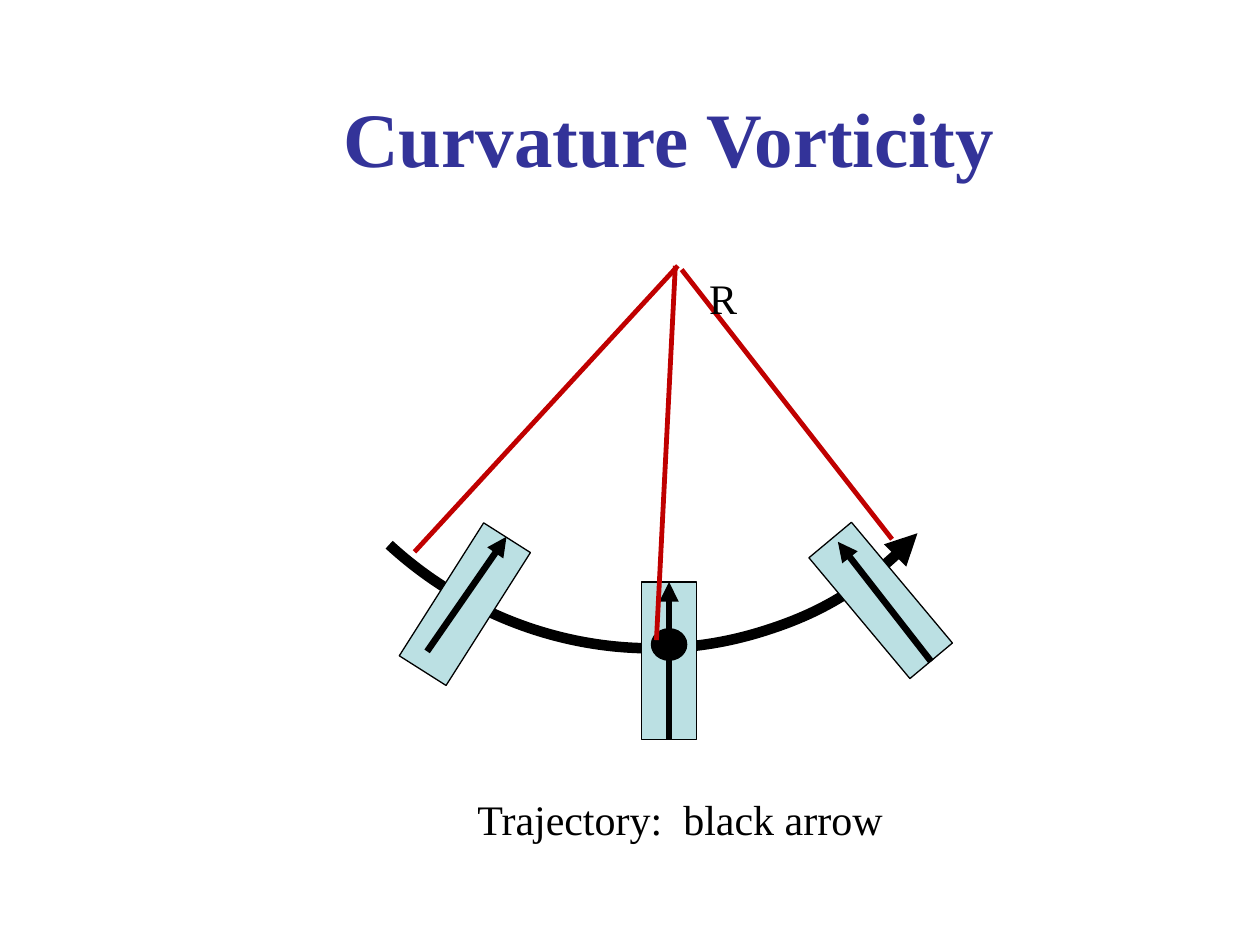
from pptx import Presentation
from pptx.dml.color import RGBColor
from pptx.enum.shapes import MSO_CONNECTOR, MSO_SHAPE
from pptx.enum.text import MSO_ANCHOR, PP_ALIGN
from pptx.oxml.ns import qn
from pptx.util import Inches, Pt
from lxml.etree import SubElement

COLORS = {"title": "333399", "black": "000000", "parcel": "BBE0E3", "radius": "C00000"}

presentation = Presentation()
presentation.slide_width, presentation.slide_height = Inches(10), Inches(7.5)
slide = presentation.slides.add_slide(presentation.slide_layouts[6])


def add_text(text, left, top, width, height, size=24, color="black", bold=False,
             align=PP_ALIGN.LEFT, anchor=MSO_ANCHOR.TOP, wrap=False):
    box = slide.shapes.add_textbox(Inches(left), Inches(top), Inches(width), Inches(height))
    frame = box.text_frame
    frame.word_wrap = wrap
    frame.vertical_anchor = anchor
    paragraph = frame.paragraphs[0]
    paragraph.text = text
    paragraph.alignment = align
    font = paragraph.font
    font.name, font.size, font.bold = "Times New Roman", Pt(size), bold
    font.color.rgb = RGBColor.from_string(COLORS[color])


def style_line(shape, color, width, arrow_end=None):
    """Set the outline; arrow_end is 'a:headEnd', 'a:tailEnd' or None."""
    shape.line.color.rgb = RGBColor.from_string(COLORS[color])
    shape.line.width = Pt(width)
    if arrow_end:
        SubElement(shape.line._get_or_add_ln(), qn(arrow_end), type="triangle")


add_text("Curvature Vorticity", 1.06, 0.46, 8.5, 1.25, size=44, color="title", bold=True,
         align=PP_ALIGN.CENTER, anchor=MSO_ANCHOR.MIDDLE, wrap=True)

trajectory = slide.shapes.add_shape(
    MSO_SHAPE.ARC, Inches(2.15), Inches(-0.84), Inches(5.81), Inches(6.05))
trajectory.rotation = 132.6
trajectory.shadow.inherit = False
trajectory.fill.background()
style_line(trajectory, "black", 6, "a:headEnd")

# Three air parcels along the trajectory, then the point at the middle one
parcels = []
for kind, left, top, width, height, rotation, fill in (
    (MSO_SHAPE.RECTANGLE, 3.47, 4.17, 0.44, 1.25, 32.4, "parcel"),
    (MSO_SHAPE.RECTANGLE, 5.09, 4.62, 0.44, 1.25, 0, "parcel"),
    (MSO_SHAPE.RECTANGLE, 6.77, 4.14, 0.44, 1.25, 320.1, "parcel"),
    (MSO_SHAPE.OVAL, 5.17, 4.99, 0.28, 0.25, 0, "black"),
):
    shape = slide.shapes.add_shape(
        kind, Inches(left), Inches(top), Inches(width), Inches(height))
    shape.rotation = rotation
    shape.shadow.inherit = False
    shape.fill.solid()
    shape.fill.fore_color.rgb = RGBColor.from_string(COLORS[fill])
    style_line(shape, "black", 0.75)
    parcels.append(shape)
middle_parcel = parcels[1]

# Arrows inside the parcels, then the radii of curvature
arrow = ("black", 3.75, "a:tailEnd")
radius = ("radius", 2.75, None)
for start, end, line_format, parcel in (
    ((7.39, 5.25), (6.65, 4.3), arrow, None),
    ((5.31, 5.87), (5.31, 4.62), arrow, middle_parcel),
    ((3.39, 5.17), (4.02, 4.26), arrow, None),
    ((3.29, 4.38), (5.38, 2.11), radius, None),
    ((5.21, 5.08), (5.36, 2.11), radius, None),
    ((7.08, 4.28), (5.41, 2.14), radius, None),
):
    connector = slide.shapes.add_connector(
        MSO_CONNECTOR.STRAIGHT, *(Inches(value) for value in start + end))
    style_line(connector, *line_format)
    SubElement(connector._element.spPr, qn("a:effectLst"))
    if parcel:
        connector.begin_connect(parcel, 2)
        connector.end_connect(parcel, 0)

add_text("Trajectory:  black arrow", 3.69, 6.25, 3.45, 0.5)
add_text("R", 5.53, 2.11, 0.43, 0.5)

presentation.save("out.pptx")
